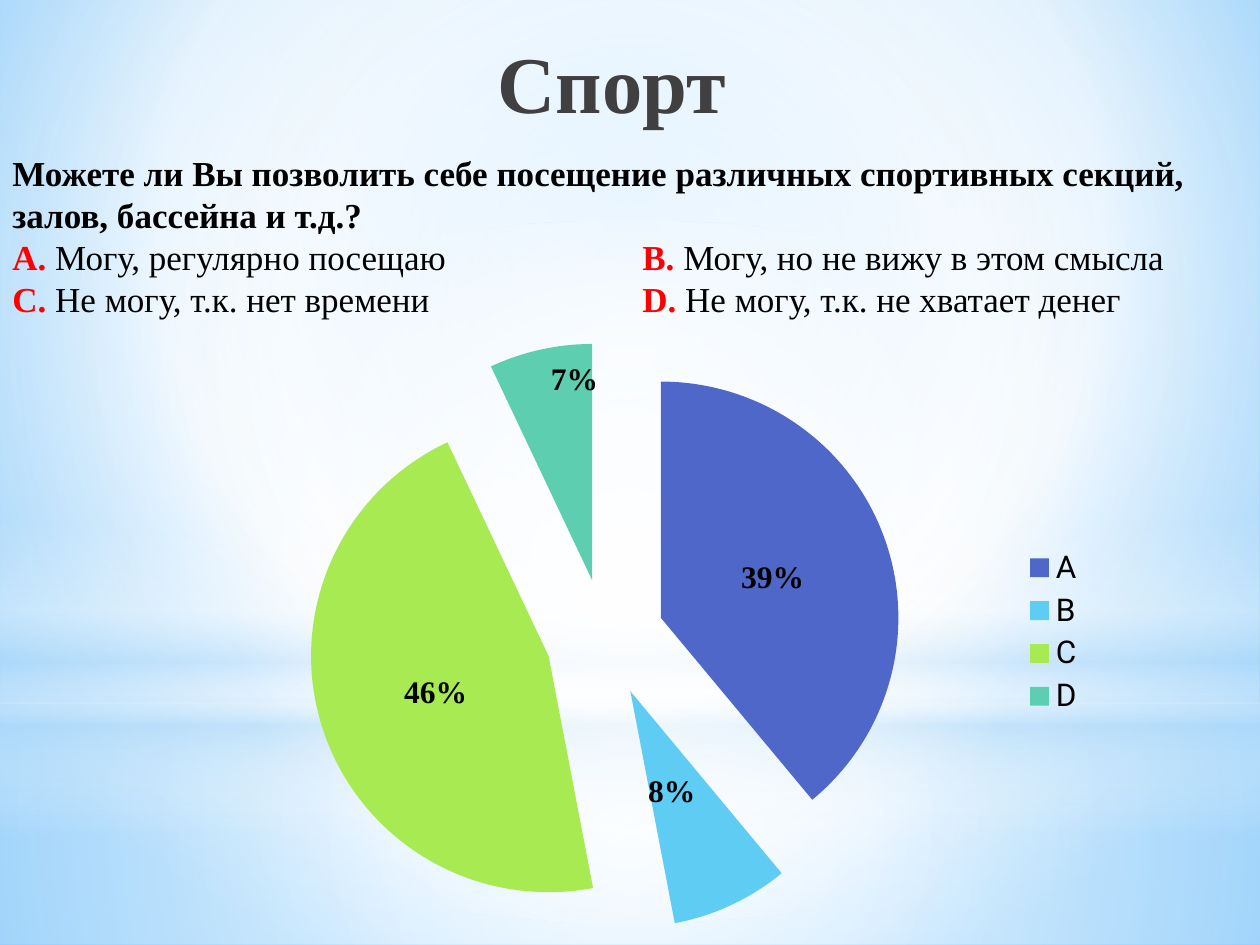
"""Build the survey slide about sport: soft gradient backdrop, question and exploded pie."""
from dataclasses import dataclass
from typing import Optional

import pptx
import pptx.chart.data
import pptx.dml.color
import pptx.enum.chart
import pptx.enum.shapes
import pptx.enum.text
import pptx.oxml
import pptx.oxml.ns
import pptx.util

WIDTH, HEIGHT = pptx.util.Inches(10), pptx.util.Inches(7.5)
SERIF, SANS = "Times New Roman", "Roboto"
COLORS = {
    "white": "FFFFFF", "mist": "B4DCFA", "sky": "9ED5FF", "azure": "5BB9FF",
    "title": "404040", "text": "000000", "letter": "FF0000",
}
SLICES = {"A": (39, "4E67C8"), "B": (8, "5ECCF3"), "C": (46, "A7EA52"), "D": (7, "5DCEAF")}
LABEL_SHIFTS = {1: {"x": -0.01, "y": -0.01}, 3: {"x": 0.01, "y": 0.01}}
PLOT_AREA = {"x": 0.19, "y": 0.1, "w": 0.53, "h": 0.82}
EXPLOSION = 25
TAB_COLUMNS = (4, 5)
QUESTION = "Можете ли Вы позволить себе посещение различных спортивных секций, залов, бассейна и т.д.?"
ANSWER_ROWS = [
    [("А. ", "Могу, регулярно посещаю\t\t"), ("В. ", "Могу, но не вижу в этом смысла")],
    [("С. ", "Не могу, т.к. нет времени\t\t"), ("D. ", "Не могу, т.к. не хватает денег")],
]


@dataclass(frozen=True)
class Box:
    """A frame given as shares of the slide's width and height."""
    left: float
    top: float
    width: float
    height: float

    def frame(self) -> tuple:
        """Return the frame in slide units."""
        return (int(self.left * WIDTH), int(self.top * HEIGHT),
                int(self.width * WIDTH), int(self.height * HEIGHT))


@dataclass(frozen=True)
class Gradient:
    """Stops of position, colour name and opacity; circular around focus unless focus is None."""
    stops: tuple
    focus: Optional[tuple] = (50, 50, 50, 50)


@dataclass(frozen=True)
class Glow:
    """One translucent layer of the backdrop."""
    box: Box
    gradient: Gradient
    kind: int = pptx.enum.shapes.MSO_SHAPE.RECTANGLE


BACKDROP = Gradient(((0, "sky", 100), (60, "white", 100), (100, "azure", 100)), (20, 10, 20, 60))
GLOWS = [
    Glow(Box(0, 0.744, 1, 0.256), Gradient(((0, "white", 91), (37, "white", 76), (100, "mist", 79)))),
    Glow(Box(0, 0, 1, 0.744), Gradient(((0, "white", 89), (48, "white", 62), (100, "mist", 79)))),
    Glow(Box(0, 0.55, 1, 0.333), Gradient(((0, "white", 0), (29, "white", 30), (45, "mist", 40),
         (55, "white", 26), (65, "mist", 60), (100, "white", 0)), None)),
    Glow(Box(0, 0.233, 1, 0.744), Gradient(((0, "white", 100), (56, "white", 0))),
         pptx.enum.shapes.MSO_SHAPE.OVAL),
]
TITLE_BOX = Box(0.366, 0.028, 0.22, 0.136)
QUESTION_BOX = Box(0, 0.154, 1, 0.193)
CHART_BOX = Box(0.154, 0.364, 0.717, 0.613)


def apply_gradient(properties, gradient: Gradient) -> None:
    """Replace the solid fill of a properties element by a gradient."""
    stops = "".join(
        f'<a:gs pos="{position * 1000}"><a:srgbClr val="{COLORS[color]}">'
        f'<a:alpha val="{opacity * 1000}"/></a:srgbClr></a:gs>'
        for position, color, opacity in gradient.stops)
    direction = '<a:lin ang="5400000" scaled="0"/>'
    if gradient.focus:
        sides = " ".join(f'{side}="{share * 1000}"' for side, share in zip("ltrb", gradient.focus))
        direction = f'<a:path path="circle"><a:fillToRect {sides}/></a:path>'
    fill = pptx.oxml.parse_xml(
        f'<a:gradFill {pptx.oxml.ns.nsdecls("a")} rotWithShape="1">'
        f'<a:gsLst>{stops}</a:gsLst>{direction}</a:gradFill>')
    solid = properties.find(pptx.oxml.ns.qn("a:solidFill"))
    properties.replace(solid, fill)


def style_font(font, size: float, color: str, bold: bool = False, name: str = SERIF) -> None:
    """Set typeface, size, weight and colour."""
    font.name, font.size, font.bold = name, pptx.util.Pt(size), bold
    font.color.rgb = pptx.dml.color.RGBColor.from_string(COLORS[color])


def draw_backdrop(slide) -> None:
    """Paint the background and its glow layers."""
    slide.background.fill.solid()
    apply_gradient(slide.element.xpath(".//p:bgPr")[0], BACKDROP)
    for glow in GLOWS:
        shape = slide.shapes.add_shape(glow.kind, *glow.box.frame())
        shape.shadow.inherit = False
        shape.line.fill.background()
        shape.fill.solid()
        apply_gradient(shape.element.spPr, glow.gradient)


def draw_title(slide) -> None:
    """Place the title placeholder above the backdrop."""
    title = slide.shapes.title
    title.element.getparent().append(title.element)
    title.left, title.top, title.width, title.height = TITLE_BOX.frame()
    title.text_frame.text = "Спорт"
    title.text_frame.auto_size = pptx.enum.text.MSO_AUTO_SIZE.NONE
    title.text_frame.vertical_anchor = pptx.enum.text.MSO_ANCHOR.TOP
    paragraph = title.text_frame.paragraphs[0]
    paragraph.alignment = pptx.enum.text.PP_ALIGN.RIGHT
    style_font(paragraph.runs[0].font, 46, "title", True)


def add_run(paragraph, text: str, color: str, bold: bool) -> None:
    """Append one formatted run of question text."""
    run = paragraph.add_run()
    run.text = text
    style_font(run.font, 20, color, bold)


def set_tabs(paragraph) -> None:
    """Give a paragraph left tab stops at the column positions."""
    stops = "".join(f'<a:tab pos="{pptx.util.Inches(column)}" algn="l"/>' for column in TAB_COLUMNS)
    paragraph._p.get_or_add_pPr().append(pptx.oxml.parse_xml(
        f'<a:tabLst {pptx.oxml.ns.nsdecls("a")}>{stops}</a:tabLst>'))


def draw_question(slide) -> None:
    """Write the question and its lettered answers in two columns."""
    text_frame = slide.shapes.add_textbox(*QUESTION_BOX.frame()).text_frame
    text_frame.word_wrap = True
    add_run(text_frame.paragraphs[0], QUESTION, "text", True)
    for row in ANSWER_ROWS:
        paragraph = text_frame.add_paragraph()
        set_tabs(paragraph)
        for letter, answer in row:
            add_run(paragraph, letter, "letter", True)
            add_run(paragraph, answer, "text", False)


def manual_layout(shares: dict, modes: str = ""):
    """Return a chart layout element with the given shares of the chart."""
    values = "".join(f'<c:{key} val="{share}"/>' for key, share in shares.items())
    return pptx.oxml.parse_xml(
        f'<c:layout {pptx.oxml.ns.nsdecls("c")}><c:manualLayout>{modes}{values}'
        '</c:manualLayout></c:layout>')


def arrange_pie(chart) -> None:
    """Pull the slices apart, fix the plot area and nudge the narrow slices' labels."""
    for properties in chart.element.xpath(".//c:dPt/c:spPr"):
        properties.addprevious(pptx.oxml.parse_xml(
            f'<c:explosion {pptx.oxml.ns.nsdecls("c")} val="{EXPLOSION}"/>'))
    plot_area = chart.element.xpath(".//c:plotArea")[0]
    for layout in plot_area.xpath("./c:layout"):
        plot_area.remove(layout)
    plot_area.insert(0, manual_layout(
        PLOT_AREA, '<c:layoutTarget val="inner"/><c:xMode val="edge"/><c:yMode val="edge"/>'))
    for index, shift in LABEL_SHIFTS.items():
        chart.element.xpath(f'.//c:dLbl/c:idx[@val="{index}"]')[0].addnext(manual_layout(shift))


def draw_chart(slide) -> None:
    """Draw the exploded pie of the answers."""
    position = pptx.enum.chart.XL_LABEL_POSITION
    data = pptx.chart.data.CategoryChartData(number_format='0"%"')
    data.categories = list(SLICES)
    data.add_series("Series 1", [value for value, _ in SLICES.values()])
    chart = slide.shapes.add_chart(
        pptx.enum.chart.XL_CHART_TYPE.PIE, *CHART_BOX.frame(), data).chart
    chart.has_title = False
    style_font(chart.font, 18, "text", name=SANS)
    chart.has_legend = True
    chart.legend.position = pptx.enum.chart.XL_LEGEND_POSITION.RIGHT
    chart.legend.include_in_layout = False
    for index, (letter, (_, color)) in enumerate(SLICES.items()):
        point = chart.plots[0].series[0].points[index]
        point.format.fill.solid()
        point.format.fill.fore_color.rgb = pptx.dml.color.RGBColor.from_string(color)
        style_font(point.data_label.font, 18, "text", True)
        point.data_label.position = position.INSIDE_END if letter == "D" else position.CENTER
    arrange_pie(chart)


presentation = pptx.Presentation()
presentation.slide_width, presentation.slide_height = WIDTH, HEIGHT
survey_slide = presentation.slides.add_slide(presentation.slide_layouts[5])
for draw in (draw_backdrop, draw_title, draw_chart, draw_question):
    draw(survey_slide)
presentation.save("out.pptx")
